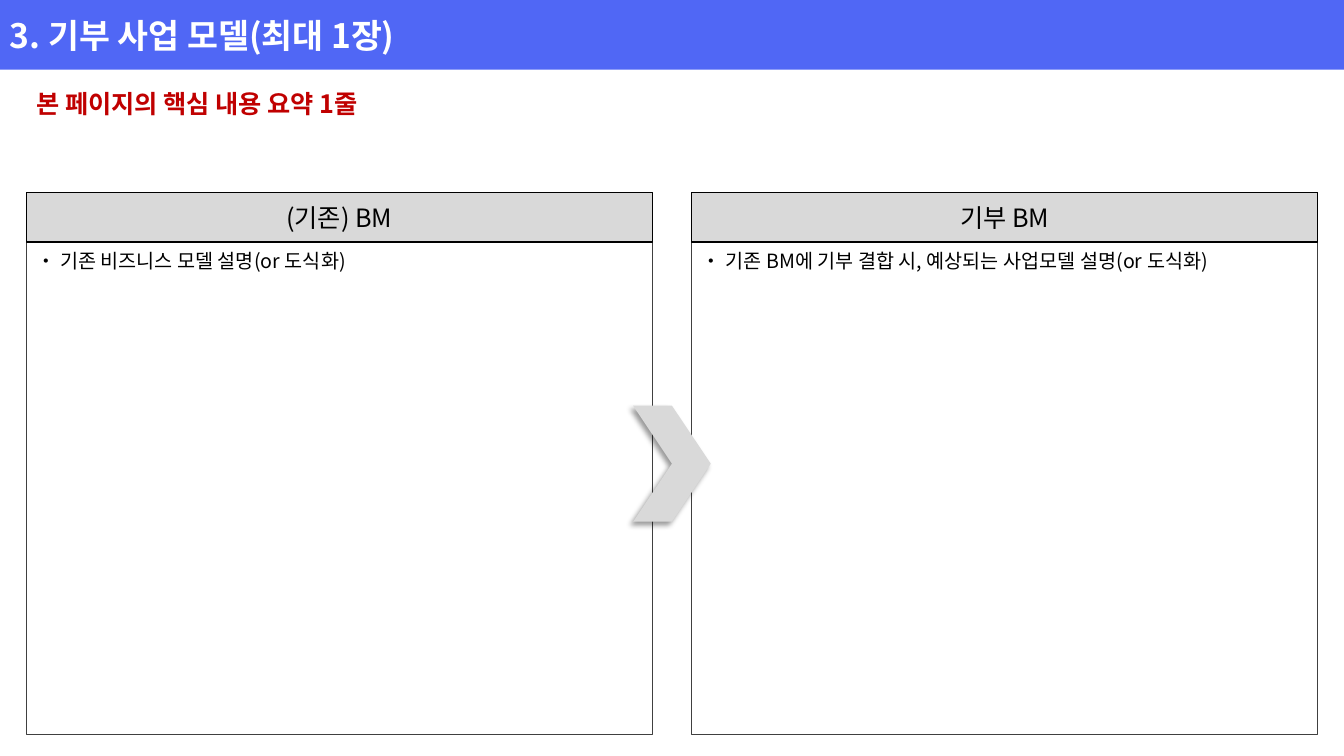
import pptx
import pptx.util
import pptx.dml.color
import pptx.enum.shapes
import pptx.enum.text
import pptx.oxml
import pptx.oxml.ns

Inches = pptx.util.Inches
ALIGN = pptx.enum.text.PP_ALIGN
ANCHOR = pptx.enum.text.MSO_ANCHOR
PRESET = pptx.enum.shapes.MSO_SHAPE

WIDTH, HEIGHT = 13.33, 7.5
MARGIN, GUTTER = 0.26, 0.39
COLUMN = (WIDTH - 2 * MARGIN - GUTTER) / 2
BANNER_HEIGHT = 0.69
PANEL_TOP, PANEL_HEIGHT = 1.91, 5.38
HEADER_HEIGHT = 0.49
FONT = "Noto Sans CJK KR"
COLORS = {
    "banner": "5067F5",
    "white": "FFFFFF",
    "summary": "C00000",
    "gray": "D9D9D9",
    "outline": "404040",
    "black": "000000",
}
PANELS = [
    ("(기존) BM", "• 기존 비즈니스 모델 설명(or 도식화)"),
    ("기부 BM", "• 기존 BM에 기부 결합 시, 예상되는 사업모델 설명(or 도식화)"),
]


def rgb(name):
    return pptx.dml.color.RGBColor.from_string(COLORS[name])


def write(shape, text, size, color, bold=False, align=ALIGN.LEFT,
          anchor=ANCHOR.MIDDLE, spacing=None):
    frame = shape.text_frame
    frame.word_wrap = True
    frame.vertical_anchor = anchor
    paragraph = frame.paragraphs[0]
    paragraph.alignment = align
    if spacing:
        paragraph.line_spacing = spacing
    run = paragraph.add_run()
    run.text = text
    run.font.size = pptx.util.Pt(size)
    run.font.bold = bold
    run.font.name = FONT
    run.font.color.rgb = rgb(color)
    east_asian = pptx.oxml.parse_xml(
        f'<a:ea {pptx.oxml.ns.nsdecls("a")} typeface="{FONT}"/>')
    run.font._element.find(pptx.oxml.ns.qn("a:latin")).addnext(east_asian)


def add_block(slide, preset, left, top, width, height, fill=None, line=None):
    shape = slide.shapes.add_shape(
        preset, Inches(left), Inches(top), Inches(width), Inches(height))
    shape.shadow.inherit = False
    if fill:
        shape.fill.solid()
        shape.fill.fore_color.rgb = rgb(fill)
    else:
        shape.fill.background()
    if line:
        shape.line.color.rgb = rgb(line)
        shape.line.width = pptx.util.Pt(1)
    else:
        shape.line.fill.background()
    return shape


def add_label(slide, left, top, width, height):
    return slide.shapes.add_textbox(
        Inches(left), Inches(top), Inches(width), Inches(height))


def add_soft_shadow(shape):
    """Cast a 40 % black shadow down and to the left."""
    effects = shape._element.spPr.find(pptx.oxml.ns.qn("a:effectLst"))
    effects.append(pptx.oxml.parse_xml(
        f'<a:outerShdw {pptx.oxml.ns.nsdecls("a")} blurRad="{pptx.util.Pt(4)}" '
        f'dist="{pptx.util.Pt(3)}" dir="{135 * 60000}" algn="tr" rotWithShape="0">'
        f'<a:srgbClr val="{COLORS["black"]}"><a:alpha val="40000"/></a:srgbClr>'
        '</a:outerShdw>'))


def add_banner(slide):
    banner = add_block(slide, PRESET.RECTANGLE, 0, 0, WIDTH, BANNER_HEIGHT, "banner")
    write(banner, "3. 기부 사업 모델(최대 1장)", 24, "white", bold=True)


def add_summary(slide):
    summary = add_label(slide, MARGIN, BANNER_HEIGHT, WIDTH - 2 * MARGIN, 0.53)
    write(summary, "본 페이지의 핵심 내용 요약 1줄", 18, "summary", bold=True, spacing=1.5)


def add_panel_body(slide, left, description):
    add_block(slide, PRESET.RECTANGLE, left, PANEL_TOP, COLUMN, PANEL_HEIGHT,
              line="outline")
    body = add_label(slide, left, PANEL_TOP + HEADER_HEIGHT + 0.02, COLUMN, 0.34)
    write(body, description, 14, "black", align=ALIGN.JUSTIFY, anchor=ANCHOR.TOP)
    body.text_frame.auto_size = pptx.enum.text.MSO_AUTO_SIZE.SHAPE_TO_FIT_TEXT


def add_panel_header(slide, left, title):
    header = add_block(slide, PRESET.RECTANGLE, left, PANEL_TOP, COLUMN,
                       HEADER_HEIGHT, "gray", "black")
    write(header, title, 18, "black", align=ALIGN.CENTER)


def add_chevron(slide):
    width, height = 0.77, 1.15
    chevron = add_block(slide, PRESET.CHEVRON, (WIDTH - width) / 2,
                        PANEL_TOP + (PANEL_HEIGHT - height) / 2, width, height, "gray")
    add_soft_shadow(chevron)


def main():
    presentation = pptx.Presentation()
    presentation.slide_width = Inches(WIDTH)
    presentation.slide_height = Inches(HEIGHT)
    slide = presentation.slides.add_slide(presentation.slide_layouts[6])

    add_banner(slide)
    add_summary(slide)
    lefts = [MARGIN + index * (COLUMN + GUTTER) for index in range(len(PANELS))]
    for left, (title, description) in zip(lefts, PANELS):
        add_panel_body(slide, left, description)
    add_chevron(slide)
    for left, (title, description) in zip(lefts, PANELS):
        add_panel_header(slide, left, title)

    presentation.save("out.pptx")


if __name__ == "__main__":
    main()
